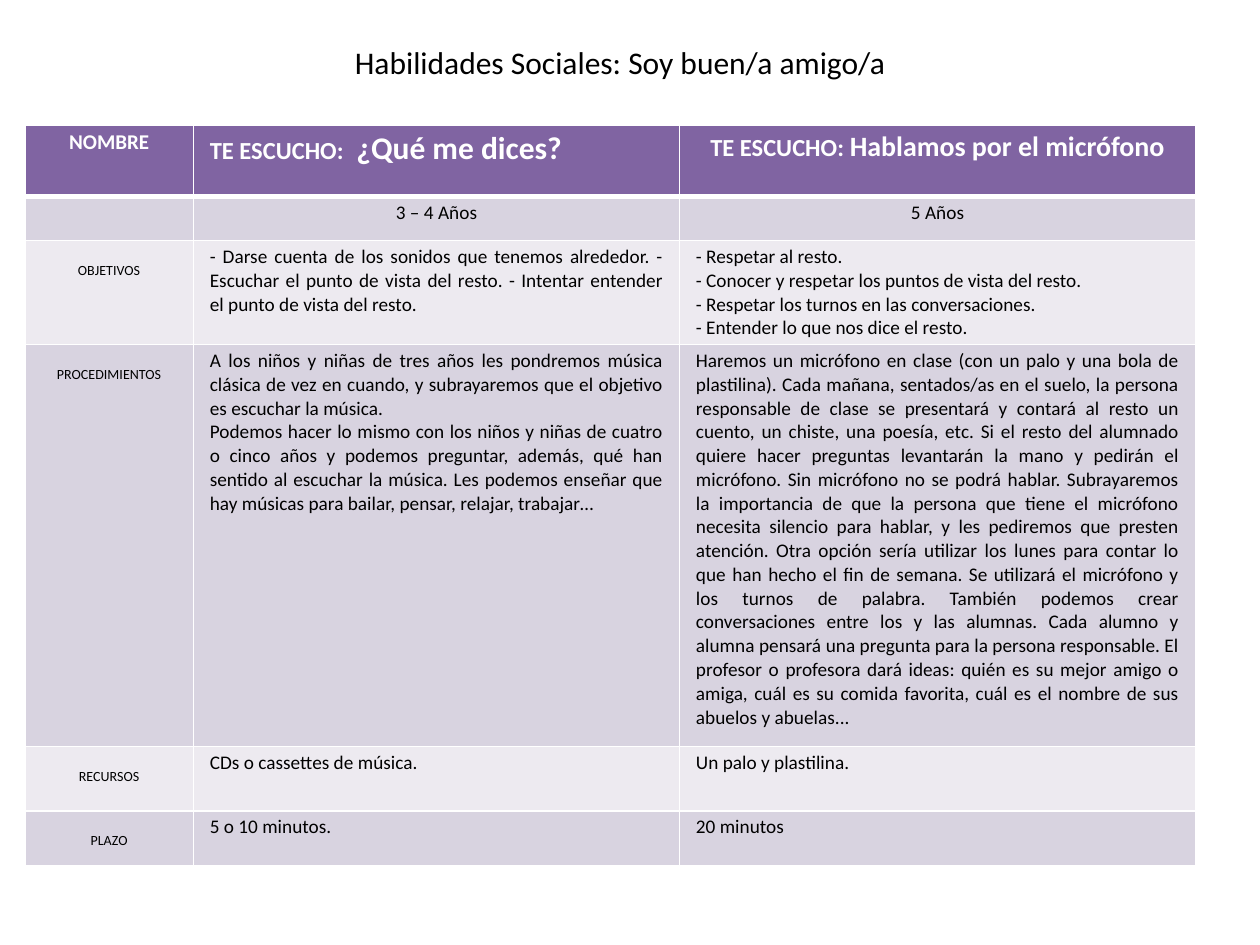
import lxml.etree
import pptx
import pptx.dml.color
import pptx.enum.text
import pptx.oxml.ns
import pptx.util

Cm = pptx.util.Cm
RGBColor = pptx.dml.color.RGBColor
ALIGN = pptx.enum.text.PP_ALIGN

BLACK = RGBColor(0x00, 0x00, 0x00)
WHITE = RGBColor(0xFF, 0xFF, 0xFF)
PURPLE = RGBColor(0x80, 0x64, 0xA2)
LILAC = RGBColor(0xD8, 0xD3, 0xE0)
PALE_LILAC = RGBColor(0xED, 0xEA, 0xF0)

COLUMN_WIDTHS = (3.4, 9.8, 10.4)
ROW_HEIGHTS = (1.43, 0.89, 2.06, 8.1, 1.3, 1.11)

HEADINGS = (
    ([("NOMBRE", 12)], ALIGN.CENTER),
    ([("TE ESCUCHO: ", 14), (" ¿Qué me dices?", 18)], ALIGN.LEFT),
    ([("TE ESCUCHO: ", 14), ("Hablamos por el micrófono", 16)], ALIGN.CENTER),
)

MICROPHONE_STEPS = (
    "Haremos un micrófono en clase (con un palo y una bola de plastilina). "
    "Cada mañana, sentados/as en el suelo, la persona responsable de clase "
    "se presentará y contará al resto un cuento, un chiste, una poesía, etc.",
    "Si el resto del alumnado quiere hacer preguntas levantarán la mano y "
    "pedirán el micrófono. Sin micrófono no se podrá hablar. Subrayaremos la "
    "importancia de que la persona que tiene el micrófono necesita silencio "
    "para hablar, y les pediremos que presten atención.",
    "Otra opción sería utilizar los lunes para contar lo que han hecho el fin "
    "de semana. Se utilizará el micrófono y los turnos de palabra. También "
    "podemos crear conversaciones entre los y las alumnas.",
    "Cada alumno y alumna pensará una pregunta para la persona responsable. "
    "El profesor o profesora dará ideas: quién es su mejor amigo o amiga, "
    "cuál es su comida favorita, cuál es el nombre de sus abuelos y abuelas...",
)

# Each row: label, then the paragraphs and alignment of both activities.
ROWS = (
    ("", (["3 – 4 Años"], ALIGN.CENTER), (["5 Años"], ALIGN.CENTER)),
    ("OBJETIVOS",
     (["- Darse cuenta de los sonidos que tenemos alrededor. - Escuchar el "
       "punto de vista del resto. - Intentar entender el punto de vista del "
       "resto."], ALIGN.JUSTIFY),
     (["- Respetar al resto.",
       "- Conocer y respetar los puntos de vista del resto.",
       "- Respetar los turnos en las conversaciones.",
       "- Entender lo que nos dice el resto."], ALIGN.LEFT)),
    ("PROCEDIMIENTOS",
     (["A los niños y niñas de tres años les pondremos música clásica de vez "
       "en cuando, y subrayaremos que el objetivo es escuchar la música.",
       "Podemos hacer lo mismo con los niños y niñas de cuatro o cinco años y "
       "podemos preguntar, además, qué han sentido al escuchar la música. Les "
       "podemos enseñar que hay músicas para bailar, pensar, relajar, "
       "trabajar…"], ALIGN.JUSTIFY),
     ([" ".join(MICROPHONE_STEPS)], ALIGN.JUSTIFY)),
    ("RECURSOS", (["CDs o cassettes de música."], ALIGN.LEFT),
     (["Un palo y plastilina."], ALIGN.LEFT)),
    ("PLAZO", (["5 o 10 minutos."], ALIGN.JUSTIFY), (["20 minutos"], ALIGN.LEFT)),
)


def write(frame, paragraphs, color=BLACK, bold=False, align=ALIGN.LEFT):
    """Fill a text frame; each paragraph is a list of (text, size) spans."""
    for index, spans in enumerate(paragraphs):
        para = frame.paragraphs[0] if index == 0 else frame.add_paragraph()
        para.alignment = align
        for text, size in spans:
            if text:
                span = para.add_run()
                span.text = text
                span.font.name = "Calibri"
                span.font.size = pptx.util.Pt(size)
                span.font.bold = bold
                span.font.color.rgb = color
            # Keeps an empty cell from growing to the default text size.
            end = para._p.get_or_add_endParaRPr()
            end.set("sz", str(size * 100))


def add_borders(cell, top=1, bottom=1):
    """Draw white cell borders; must run before the cell is filled."""
    qn = pptx.oxml.ns.qn
    properties = cell._tc.get_or_add_tcPr()
    for side, width in (("L", 1), ("R", 1), ("T", top), ("B", bottom)):
        line = lxml.etree.SubElement(properties, qn(f"a:ln{side}"),
                                     w=str(int(pptx.util.Pt(width))))
        fill = lxml.etree.SubElement(line, qn("a:solidFill"))
        lxml.etree.SubElement(fill, qn("a:srgbClr"), val=str(WHITE))


def format_cell(cell, color, margin_top=0.09, **borders):
    add_borders(cell, **borders)
    cell.fill.solid()
    cell.fill.fore_color.rgb = color
    cell.margin_left = cell.margin_right = Cm(0.33)
    cell.margin_top, cell.margin_bottom = Cm(margin_top), Cm(0.09)


def place_title(page, left, top, width, height):
    box = page.shapes.title
    box.left, box.top, box.width, box.height = map(Cm, (left, top, width, height))
    frame = box.text_frame
    frame.word_wrap = True
    frame.auto_size = pptx.enum.text.MSO_AUTO_SIZE.NONE
    write(frame, [[("Habilidades Sociales: Soy buen/a amigo/a", 18)]])


def add_activity_table(page, left, top):
    box = page.shapes.add_table(
        len(ROW_HEIGHTS), len(COLUMN_WIDTHS), Cm(left), Cm(top),
        Cm(sum(COLUMN_WIDTHS)), Cm(sum(ROW_HEIGHTS)))
    table = box.table
    for column, width in zip(table.columns, COLUMN_WIDTHS):
        column.width = Cm(width)
    for row, height in zip(table.rows, ROW_HEIGHTS):
        row.height = Cm(height)

    for column, (spans, align) in enumerate(HEADINGS):
        cell = table.cell(0, column)
        format_cell(cell, PURPLE, bottom=3)
        write(cell.text_frame, [spans], color=WHITE, bold=True, align=align)

    for row, (label, *activities) in enumerate(ROWS, start=1):
        color = LILAC if row % 2 else PALE_LILAC
        border_top = 3 if row == 1 else 1
        cell = table.cell(row, 0)
        format_cell(cell, color, margin_top=0.43 if label else 0.09, top=border_top)
        write(cell.text_frame, [[(label, 8)]], align=ALIGN.CENTER)
        for column, (texts, align) in enumerate(activities, start=1):
            cell = table.cell(row, column)
            format_cell(cell, color, top=border_top)
            write(cell.text_frame, [[(text, 11)] for text in texts], align=align)


def main():
    deck = pptx.Presentation()
    deck.slide_width, deck.slide_height = Cm(25.4), Cm(19.05)
    page = deck.slides.add_slide(deck.slide_layouts.get_by_name("Title Only"))
    place_title(page, left=6.9, top=0.74, width=12.2, height=1.02)
    add_activity_table(page, left=0.5, top=2.53)
    deck.save("out.pptx")


if __name__ == "__main__":
    main()
